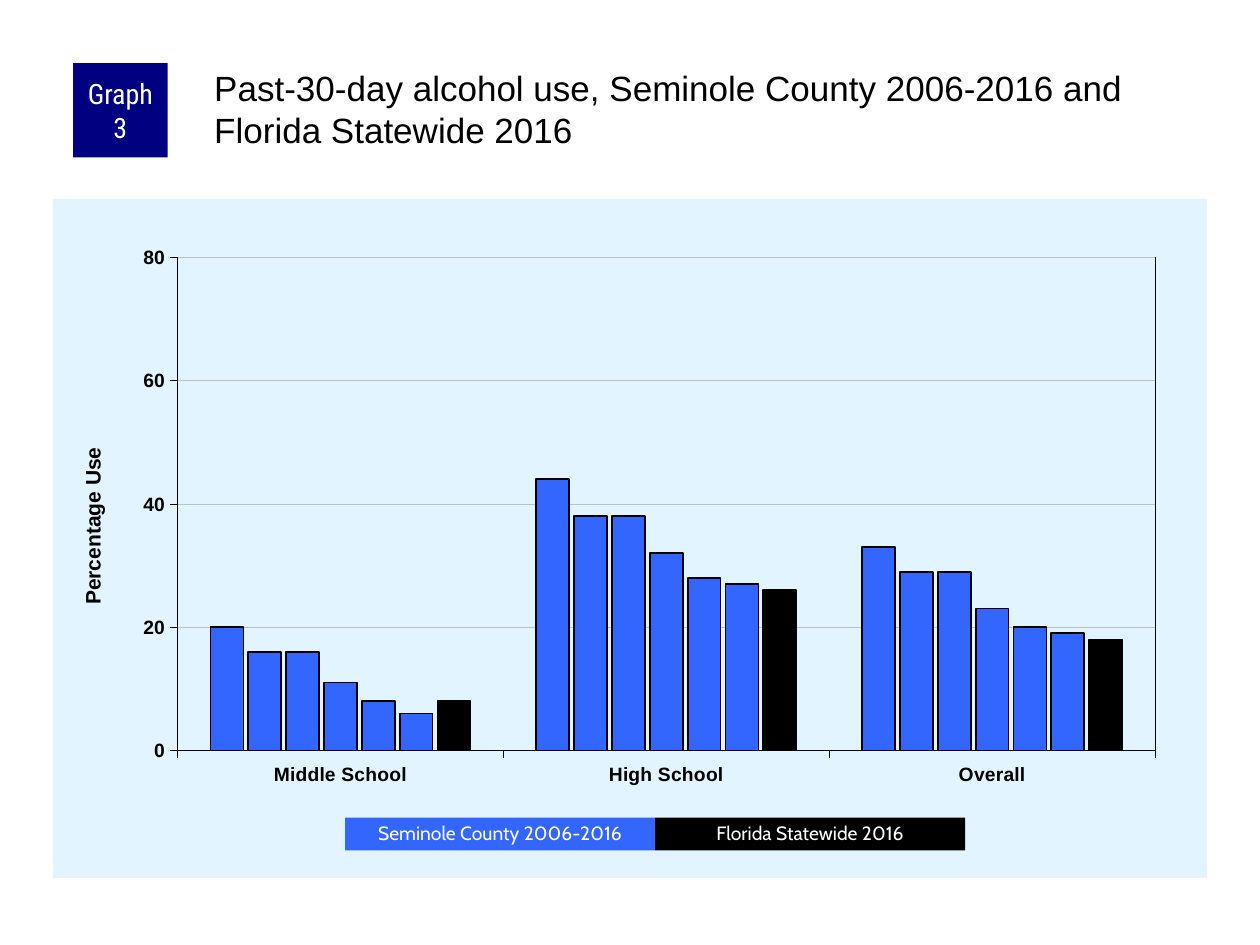
from lxml import etree
from pptx import Presentation
from pptx.chart.data import CategoryChartData
from pptx.dml.color import RGBColor
from pptx.enum.chart import XL_CHART_TYPE, XL_TICK_MARK
from pptx.enum.shapes import MSO_SHAPE
from pptx.enum.text import MSO_ANCHOR, MSO_AUTO_SIZE, PP_ALIGN
from pptx.oxml import parse_xml
from pptx.oxml.ns import nsdecls, qn
from pptx.util import Inches, Pt

COLUMNS = XL_CHART_TYPE.COLUMN_CLUSTERED
TICK_OUTSIDE, TICK_NONE = XL_TICK_MARK.OUTSIDE, XL_TICK_MARK.NONE
RECTANGLE = MSO_SHAPE.RECTANGLE
TOP, MIDDLE = MSO_ANCHOR.TOP, MSO_ANCHOR.MIDDLE
LEFT, CENTER = PP_ALIGN.LEFT, PP_ALIGN.CENTER

BLACK = RGBColor(0x00, 0x00, 0x00)
WHITE = RGBColor(0xFF, 0xFF, 0xFF)
NAVY = RGBColor(0x00, 0x00, 0x80)
BLUE = RGBColor(0x33, 0x66, 0xFF)
PALE_BLUE = RGBColor(0xE1, 0xF4, 0xFF)
GRID_GRAY = RGBColor(0xC0, 0xC0, 0xC0)

# Content
TITLE = "Past-30-day alcohol use, Seminole County 2006-2016 and Florida Statewide 2016"
BADGE = "Graph 3"
AXIS_TITLE = "Percentage Use"
CATEGORIES = ["Middle School", "High School", "Overall"]
COUNTY_SERIES = [(20, 44, 33), (16, 38, 29), (16, 38, 29),
                 (11, 32, 23), (8, 28, 20), (6, 27, 19)]
STATE_SERIES = (8, 26, 18)
LEGEND = [("Seminole County 2006-2016", BLUE), ("Florida Statewide 2016", BLACK)]

# Positions in inches: left, top, width, height
TITLE_BOX = (1.67, 0.5, 7.92, 0.83)
BADGE_BOX = (0.58, 0.5, 0.75, 0.75)
CHART_BOX = (0.42, 1.58, 9.16, 5.39)
LEGEND_LEFT, LEGEND_TOP, LEGEND_WIDTH, LEGEND_HEIGHT = 2.74, 6.49, 2.46, 0.26


def set_font(font, **values):
    for name, value in {"color": BLACK, "name": "Arial", **values}.items():
        if name == "color":
            font.color.rgb = value
        else:
            setattr(font, name, value)


def set_line(line, color, width):
    line.color.rgb = color
    line.width = Pt(width)


def set_frame(frame, margins, anchor):
    frame.word_wrap = True
    frame.auto_size = MSO_AUTO_SIZE.NONE
    frame.vertical_anchor = anchor
    for side, margin in zip(("left", "top", "right", "bottom"), margins):
        setattr(frame, f"margin_{side}", Inches(margin))


def add_label(slide, text, box, fill, font_name, size, margins, line_spacing=1.0):
    shape = slide.shapes.add_shape(RECTANGLE, *map(Inches, box))
    shape.shadow.inherit = False
    shape.fill.solid()
    shape.fill.fore_color.rgb = fill
    shape.line.fill.background()
    set_frame(shape.text_frame, margins, MIDDLE)
    paragraph = shape.text_frame.paragraphs[0]
    paragraph.text = text
    paragraph.alignment = CENTER
    paragraph.line_spacing = line_spacing
    set_font(paragraph.font, name=font_name, size=Pt(size), color=WHITE)


def set_layout(parent, index, **values):
    """Place a chart part by hand, as fractions of the chart."""
    for old_layout in parent.findall(qn("c:layout")):
        parent.remove(old_layout)
    layout = etree.Element(qn("c:layout"))
    manual = etree.SubElement(layout, qn("c:manualLayout"))
    for name, value in values.items():
        etree.SubElement(manual, qn(f"c:{name}")).set("val", str(value))
    parent.insert(index, layout)


def area_format(fill, line):
    return parse_xml(f"<c:spPr {nsdecls('c', 'a')}>{fill}<a:ln w=\"3175\">{line}</a:ln></c:spPr>")


def solid(color):
    return f'<a:solidFill><a:srgbClr val="{color}"/></a:solidFill>'


def add_usage_chart(slide):
    data = CategoryChartData()
    data.categories = CATEGORIES
    all_series = COUNTY_SERIES + [STATE_SERIES]
    for number, values in enumerate(all_series, 1):
        data.add_series(f"Series {number}", values)
    chart = slide.shapes.add_chart(COLUMNS, *map(Inches, CHART_BOX), data).chart
    chart.has_title = False
    chart.has_legend = False
    set_font(chart.font, size=Pt(8))

    # Columns
    plot = chart.plots[0]
    plot.gap_width, plot.overlap, plot.vary_by_categories = 200, -15, False
    colors = [BLUE] * len(COUNTY_SERIES) + [BLACK]
    for series, color in zip(plot.series, colors):
        series.format.fill.solid()
        series.format.fill.fore_color.rgb = color
        set_line(series.format.line, BLACK, 1)

    # Axes
    value_axis = chart.value_axis
    for axis in (chart.category_axis, value_axis):
        axis.major_tick_mark = TICK_OUTSIDE
        axis.minor_tick_mark = TICK_NONE
        set_line(axis.format.line, BLACK, 0.25)
        set_font(axis.tick_labels.font, size=Pt(11), bold=True)
    value_axis.minimum_scale, value_axis.maximum_scale, value_axis.major_unit = 0, 80, 20
    value_axis.has_major_gridlines = True
    set_line(value_axis.major_gridlines.format.line, GRID_GRAY, 0.25)
    axis_title = value_axis.axis_title
    axis_title.text_frame.text = AXIS_TITLE
    axis_title.text_frame._txBody.bodyPr.set("rot", "-5400000")
    axis_title.text_frame._txBody.bodyPr.set("vert", "horz")
    set_font(axis_title.text_frame.paragraphs[0].runs[0].font, size=Pt(12), bold=True)
    set_layout(axis_title._element, 1, xMode="edge", yMode="edge", x=0.02, y=0.36)

    # Plot frame and chart background
    chart_space = chart._chartSpace
    plot_area = chart_space.chart.plotArea
    set_layout(plot_area, 0, layoutTarget="inner", xMode="edge", yMode="edge",
               x=0.108, y=0.086, w=0.847, h=0.726)
    plot_area.append(area_format("<a:noFill/>", solid(BLACK)))
    chart_space.chart.addnext(area_format(solid(PALE_BLUE), "<a:noFill/>"))


def main():
    presentation = Presentation()
    presentation.slide_width, presentation.slide_height = Inches(10), Inches(7.5)
    slide = presentation.slides.add_slide(presentation.slide_layouts[5])

    # Title and badge
    title = slide.shapes.title
    title.left, title.top, title.width, title.height = map(Inches, TITLE_BOX)
    set_frame(title.text_frame, (0.03, 0.03, 0, 0), TOP)
    paragraph = title.text_frame.paragraphs[0]
    paragraph.text = TITLE
    paragraph.alignment = LEFT
    set_font(paragraph.runs[0].font, size=Pt(20))
    add_label(slide, BADGE, BADGE_BOX, NAVY, "Roboto Condensed", 16, (0.05, 0, 0.05, 0))

    # Chart with its legend strip
    add_usage_chart(slide)
    for index, (text, color) in enumerate(LEGEND):
        box = (LEGEND_LEFT + index * LEGEND_WIDTH, LEGEND_TOP, LEGEND_WIDTH, LEGEND_HEIGHT)
        add_label(slide, text, box, color, "Cabin", 11, (0.1, 0.05, 0.1, 0.05), 0.9)

    presentation.save("out.pptx")


if __name__ == "__main__":
    main()
